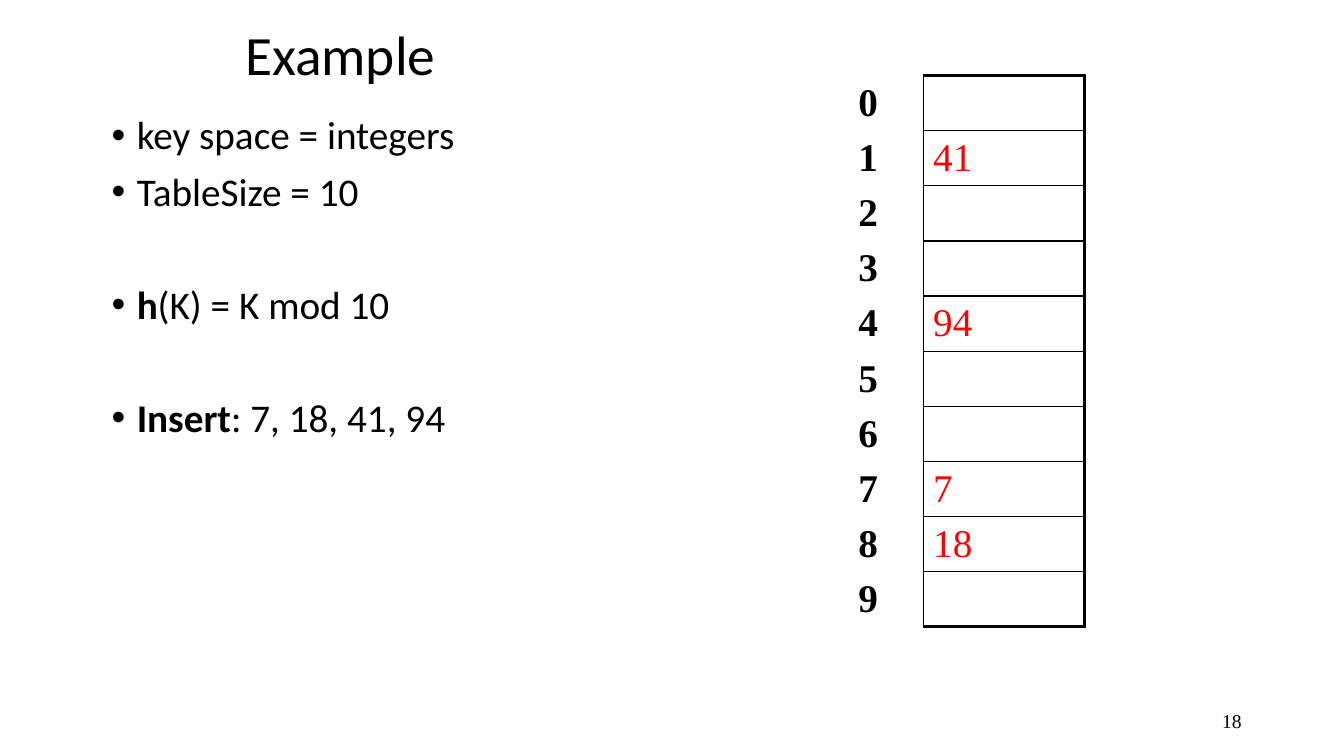
from lxml.etree import SubElement
from pptx import Presentation
from pptx.dml.color import RGBColor
from pptx.enum.text import MSO_ANCHOR, PP_ALIGN
from pptx.oxml.ns import qn
from pptx.util import Inches, Pt

COLORS = {"ink": "000000", "stored": "FF0000"}
SERIF = "Times New Roman"
TABLE_SIZE = 10
KEYS = (7, 18, 41, 94)
THIN, THICK = 1, 2.25


def write(paragraph, text, font="Calibri", size=28, color="ink", bold=False):
    run = paragraph.add_run()
    run.text = text
    run.font.name = font
    run.font.size = Pt(size)
    run.font.bold = bold
    run.font.color.rgb = RGBColor.from_string(COLORS[color])


class SlideBuilder:
    """Places elements on a grid of 160 columns and 90 rows."""

    def __init__(self):
        self.deck = Presentation()
        self.deck.slide_width = Inches(13.33)
        self.deck.slide_height = Inches(7.5)
        self.slide = self.deck.slides.add_slide(self.deck.slide_layouts[6])

    def columns(self, count):
        return round(self.deck.slide_width * count / 160)

    def rows(self, count):
        return round(self.deck.slide_height * count / 90)

    def place(self, column, row, width, height):
        return (self.columns(column), self.rows(row),
                self.columns(width), self.rows(height))

    def text_frame(self, *area, anchor=MSO_ANCHOR.MIDDLE):
        frame = self.slide.shapes.add_textbox(*self.place(*area)).text_frame
        frame.word_wrap = True
        frame.vertical_anchor = anchor
        return frame

    def line(self, *area, text, align=PP_ALIGN.LEFT, spacing=1.0, **style):
        paragraph = self.text_frame(*area).paragraphs[0]
        paragraph.alignment = align
        paragraph.line_spacing = spacing
        write(paragraph, text, **style)

    def bullets(self, *area, items):
        frame = self.text_frame(*area, anchor=MSO_ANCHOR.TOP)
        for index, (space, strong, plain) in enumerate(items):
            paragraph = frame.paragraphs[0] if index == 0 else frame.add_paragraph()
            paragraph.line_spacing = 0.9
            paragraph.space_before = Pt(space)
            properties = paragraph._p.get_or_add_pPr()
            properties.set("marL", str(Inches(0.25)))
            properties.set("indent", str(-Inches(0.25)))
            SubElement(properties, qn("a:buFont"), typeface="Arial")
            SubElement(properties, qn("a:buChar"), char="•")
            if strong:
                write(paragraph, strong, bold=True)
            write(paragraph, plain)

    def borders(self, cell, left=0, right=0, top=0, bottom=0):
        properties = cell._tc.get_or_add_tcPr()
        sides = {"L": left, "R": right, "T": top, "B": bottom}
        for index, (side, width) in enumerate(sides.items()):
            edge = SubElement(properties, qn(f"a:ln{side}"), w=str(Pt(width)))
            if width:
                fill = SubElement(edge, qn("a:solidFill"))
                SubElement(fill, qn("a:srgbClr"), val=COLORS["ink"])
            else:
                SubElement(edge, qn("a:noFill"))
            properties.insert(index, edge)

    def hash_table(self, column, row, widths, row_height, slots):
        area = self.place(column, row, sum(widths), row_height * len(slots))
        table = self.slide.shapes.add_table(len(slots), len(widths), *area).table
        table.first_row = table.horz_banding = False
        for table_column, width in zip(table.columns, widths):
            table_column.width = self.columns(width)
        last = len(slots) - 1
        for index, key in enumerate(slots):
            table.rows[index].height = self.rows(row_height)
            label, slot = table.cell(index, 0), table.cell(index, 1)
            for cell in (label, slot):
                cell.fill.background()
                cell.vertical_anchor = MSO_ANCHOR.MIDDLE
                cell.margin_top = cell.margin_bottom = Inches(0.04)
            write(label.text_frame.paragraphs[0], str(index), font=SERIF, bold=True)
            if key is not None:
                write(slot.text_frame.paragraphs[0], str(key), font=SERIF, color="stored")
            self.borders(label, right=THIN)
            self.borders(slot, left=THIN, right=THICK,
                         top=THICK if index == 0 else THIN,
                         bottom=THICK if index == last else THIN)


def main():
    example = SlideBuilder()

    # Slide number and title
    example.line(113, 83.4, 36, 4.8, text="18", align=PP_ALIGN.RIGHT,
                 font=SERIF, size=14)
    example.line(28, 2.3, 102, 9, text="Example", spacing=0.9, size=39.6)

    # Problem setup: space before, bold start, remaining text
    example.bullets(12.1, 13.2, 88.9, 59.5, items=[
        (0, "", "key space = integers"),
        (10, "", f"TableSize = {TABLE_SIZE}"),
        (50.5, "h", f"(K) = K mod {TABLE_SIZE}"),
        (50.5, "Insert", ": " + ", ".join(map(str, KEYS))),
    ])

    # Hash table with every key in its slot
    stored = {key % TABLE_SIZE: key for key in KEYS}
    slots = [stored.get(index) for index in range(TABLE_SIZE)]
    example.hash_table(101, 9, widths=(8.9, 19.2), row_height=6.38, slots=slots)

    example.deck.save("out.pptx")


if __name__ == "__main__":
    main()
